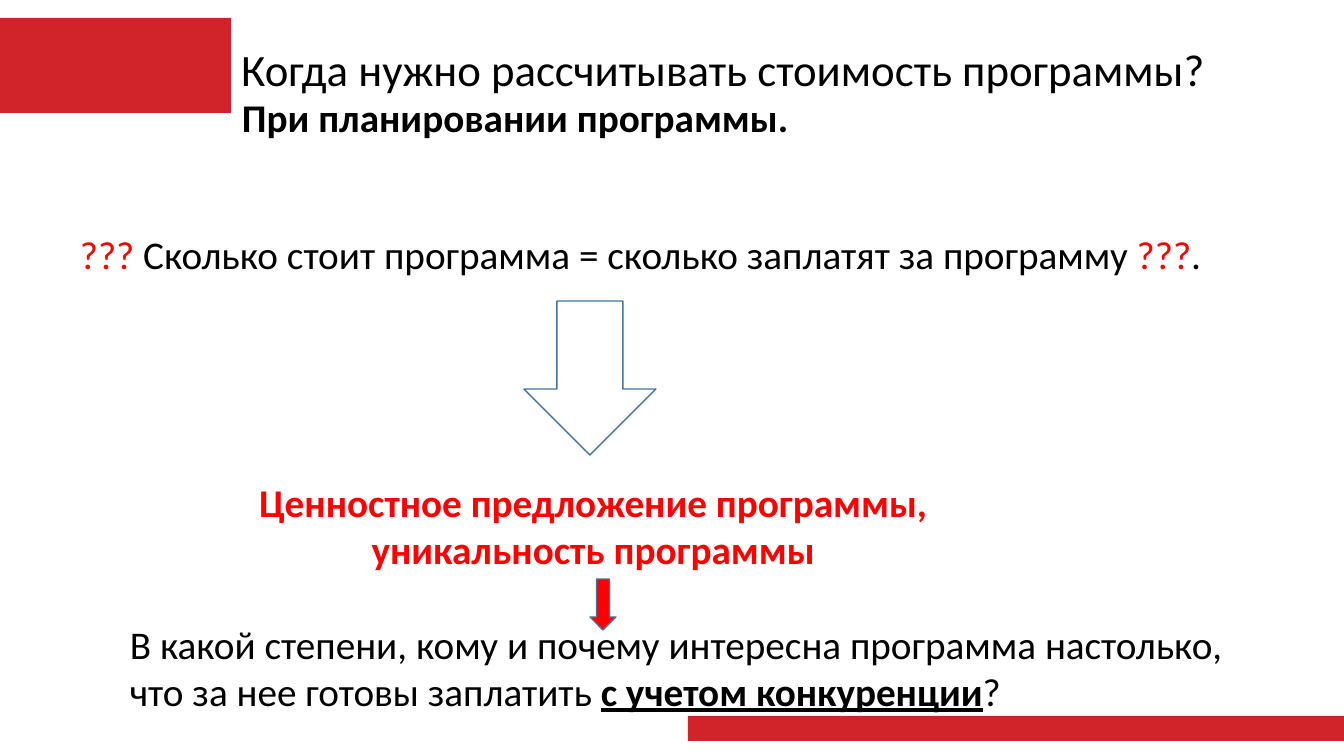
from pptx import Presentation
from pptx.dml.color import RGBColor
from pptx.enum.shapes import MSO_SHAPE
from pptx.enum.text import MSO_ANCHOR, MSO_AUTO_SIZE, PP_ALIGN
from pptx.util import Emu, Pt

PAGE_WIDTH, PAGE_HEIGHT = 1344, 756
EMU_PER_PX = 914400 / 100.8
BRAND_RED = RGBColor(0xD1, 0x23, 0x2A)
RED = RGBColor(0xFF, 0x00, 0x00)
BLACK = RGBColor(0x00, 0x00, 0x00)
WHITE = RGBColor(0xFF, 0xFF, 0xFF)
OUTLINE_BLUE = RGBColor(0x43, 0x73, 0x9E)
FONT = "Calibri"


def px(length):
    """Turn a length in px into EMU."""
    return Emu(round(length * EMU_PER_PX))


def write_text(shape, *spans, size=28, align=PP_ALIGN.LEFT):
    """Fill a shape with one paragraph of (text, format) spans."""
    frame = shape.text_frame
    frame.word_wrap = True
    frame.auto_size = MSO_AUTO_SIZE.NONE
    frame.vertical_anchor = MSO_ANCHOR.TOP
    para = frame.paragraphs[0]
    para.alignment = align
    for text, style in spans:
        span = para.add_run()
        span.text = text
        span.font.name = FONT
        span.font.size = Pt(size)
        span.font.bold = style.get("bold", False)
        span.font.underline = style.get("underline", False)
        span.font.color.rgb = style.get("color", BLACK)


def add_text(page, box, *spans, **options):
    """Add a text box at the given px box."""
    write_text(page.shapes.add_textbox(*map(px, box)), *spans, **options)


def add_figure(page, kind, box, fill, line=None):
    """Add a flat preset shape at the given px box."""
    figure = page.shapes.add_shape(kind, *map(px, box))
    figure.shadow.inherit = False
    figure.fill.solid()
    figure.fill.fore_color.rgb = fill
    if line is None:
        figure.line.fill.background()
    else:
        figure.line.color.rgb = line
        figure.line.width = Pt(1)


def add_bars(page, width, height):
    """Place the red bars at the top left and bottom right of the page."""
    add_figure(page, MSO_SHAPE.RECTANGLE, (0, 18, 231, 95), BRAND_RED)
    add_figure(page, MSO_SHAPE.RECTANGLE,
               (width - 656, height - 40, 656, 25), BRAND_RED)


def add_heading(page, left, top, width):
    """Place the title and the bold answer below it."""
    title = page.shapes.title
    title.left, title.top, title.width, title.height = map(
        px, (left, top, width, 64))
    write_text(title, ("Когда нужно рассчитывать стоимость программы?", {}),
               size=32)
    add_text(page, (left + 1, top + 51, width - 124, 57),
             ("При планировании программы.", {"bold": True}))


def add_reasoning(page, left, top, width):
    """Place the question, the value proposition and the conclusion."""
    add_text(page, (left, top, width, 57),
             ("??? ", {"color": RED}),
             ("Сколько стоит программа = сколько заплатят за программу ", {}),
             ("???", {"color": RED}),
             (".", {}))
    add_figure(page, MSO_SHAPE.DOWN_ARROW,
               (left + 454, top + 76, 132, 154), WHITE, OUTLINE_BLUE)
    add_text(page, (left + 171, top + 248, 704, 105),
             ("Ценностное предложение программы, уникальность программы",
              {"bold": True, "color": RED}),
             align=PP_ALIGN.CENTER)
    add_text(page, (left + 50, top + 390, width - 78, 105),
             ("В какой степени, кому и почему интересна программа настолько, "
              "что за нее готовы заплатить ", {}),
             ("с учетом конкуренции", {"bold": True, "underline": True}),
             ("?", {}))
    add_figure(page, MSO_SHAPE.DOWN_ARROW,
               (left + 520, top + 354, 26, 51), RED, OUTLINE_BLUE)


def main():
    """Build the slide and save the deck."""
    deck = Presentation()
    deck.slide_width, deck.slide_height = px(PAGE_WIDTH), px(PAGE_HEIGHT)
    page = deck.slides.add_slide(deck.slide_layouts[5])
    add_bars(page, PAGE_WIDTH, PAGE_HEIGHT)
    add_heading(page, 231, 37, 999)
    add_reasoning(page, 70, 225, 1201)
    deck.save("out.pptx")


if __name__ == "__main__":
    main()
